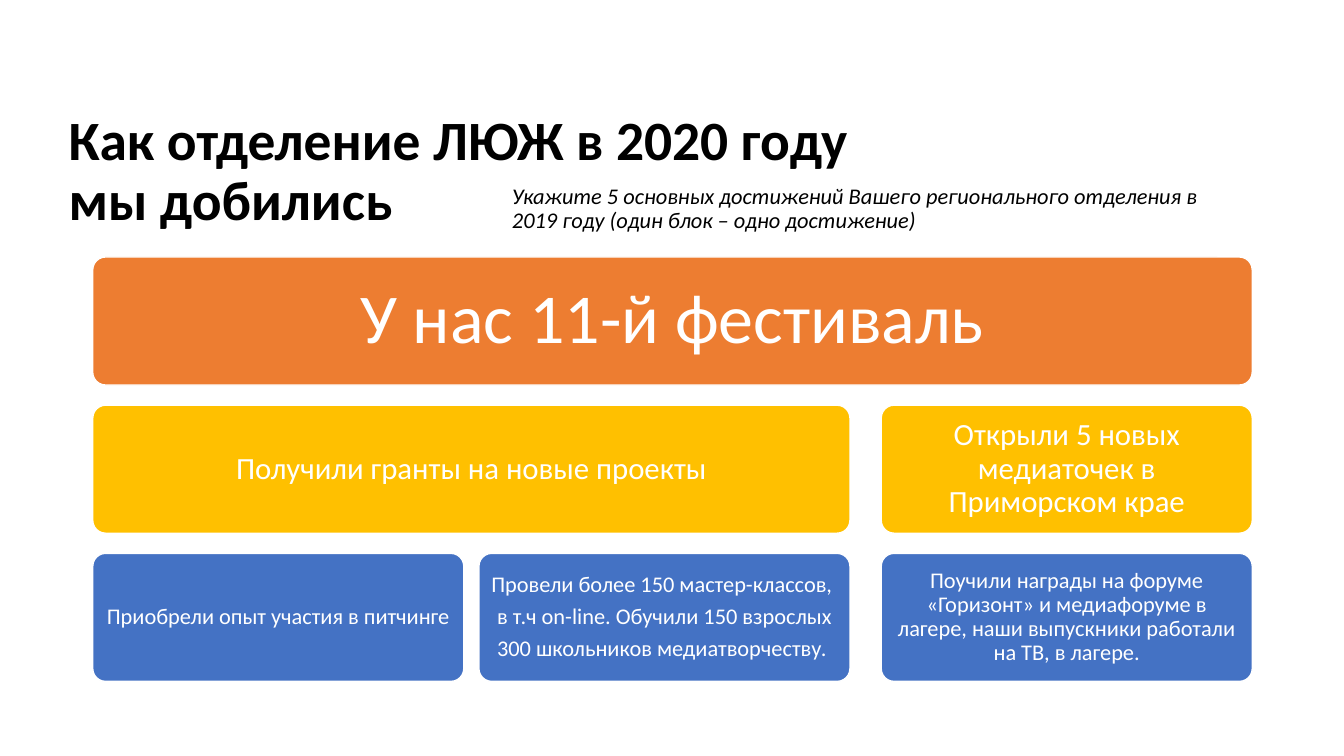
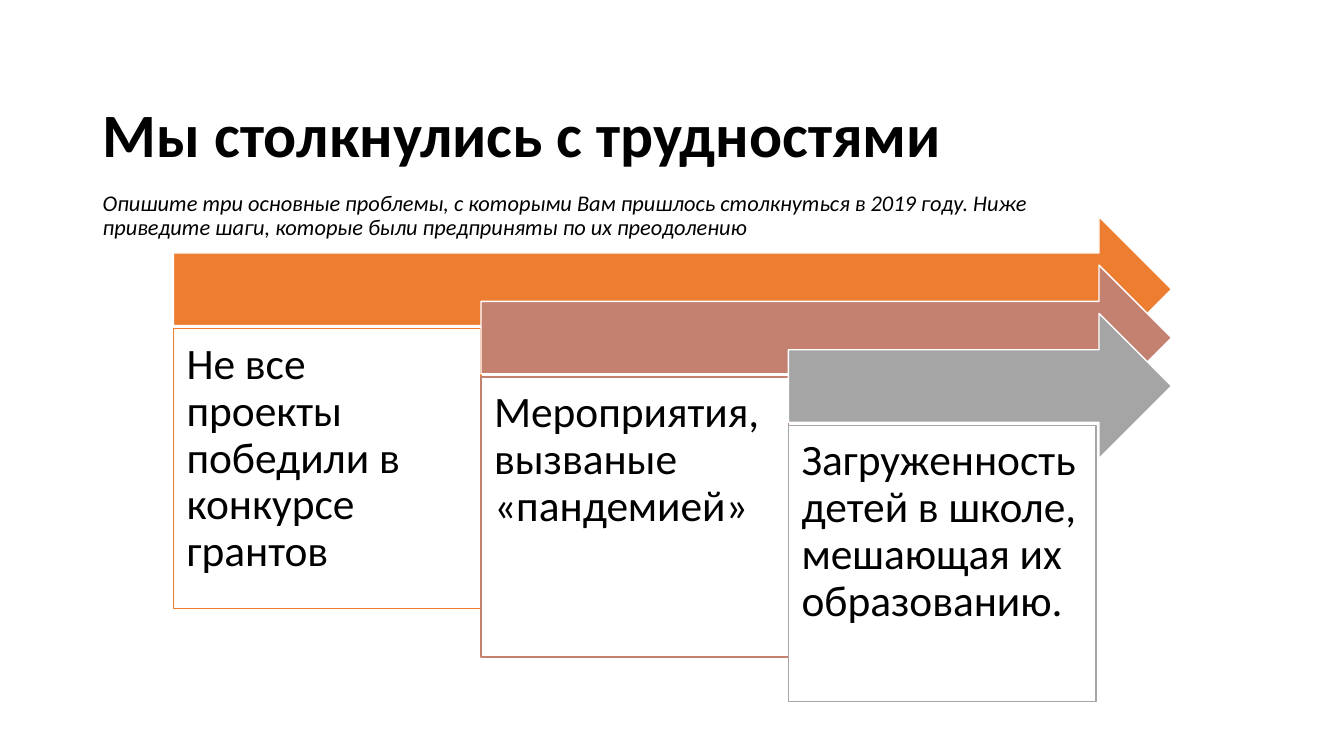
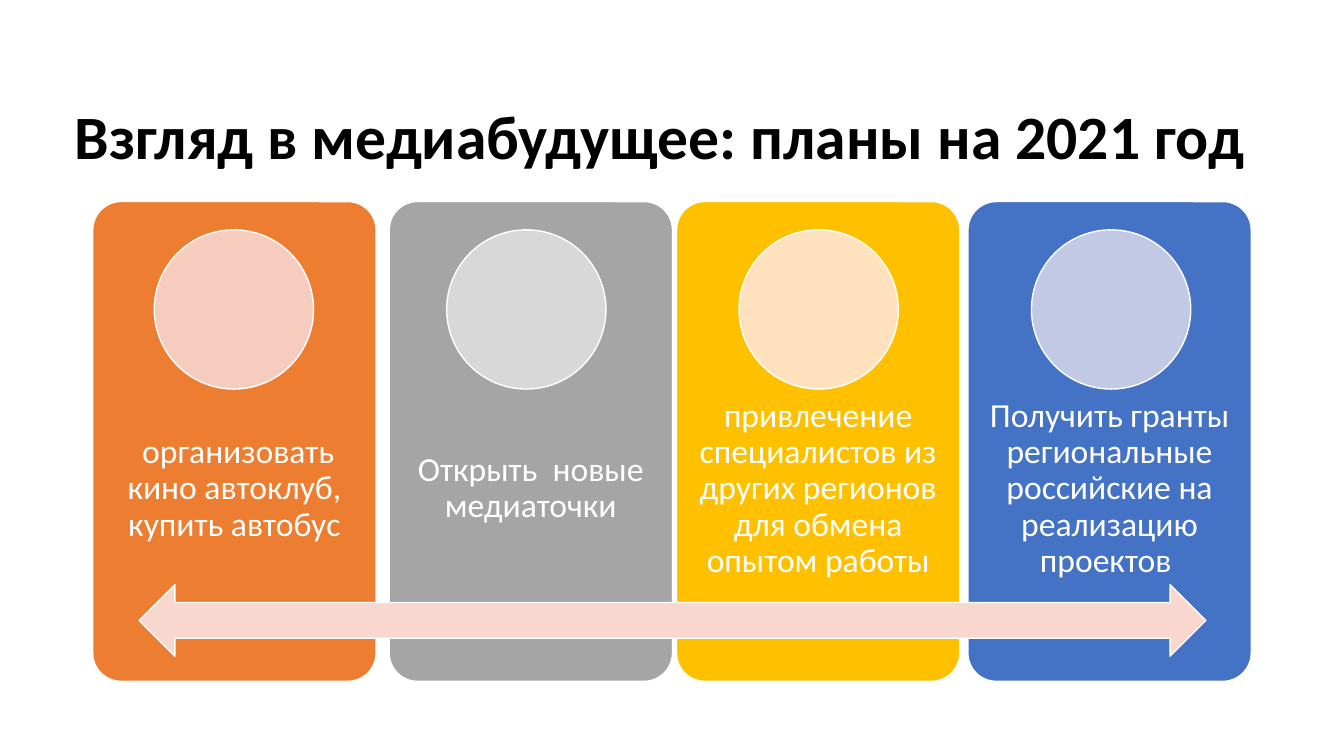
from pptx import Presentation
from pptx.dml.color import RGBColor
from pptx.enum.shapes import MSO_SHAPE as Shape
from pptx.enum.text import MSO_ANCHOR as Anchor, MSO_AUTO_SIZE as AutoSize, PP_ALIGN as Align
from pptx.util import Inches, Pt

FONT = "Calibri"
ORANGE, GOLD, BLUE, GRAY, ROSE = "ED7D31", "FFC000", "4472C4", "A5A5A5", "C48170"
WHITE, BLACK = "FFFFFF", "000000"
TITLE_ONLY = 5


def color(value):
    return RGBColor.from_string(value)


def write(text_frame, text, size, ink=BLACK, bold=False, italic=False,
          align=Align.LEFT, anchor=Anchor.TOP, insets=(0.1, 0.05, 0.1, 0.05)):
    text_frame.text = text
    text_frame.word_wrap = True
    text_frame.auto_size = AutoSize.NONE
    text_frame.vertical_anchor = anchor
    (text_frame.margin_left, text_frame.margin_top,
     text_frame.margin_right, text_frame.margin_bottom) = map(Inches, insets)
    for paragraph in text_frame.paragraphs:
        paragraph.alignment = align
        paragraph.line_spacing = 0.9
        paragraph.space_before = Pt(0)
        for run in paragraph.runs:
            run.font.name = FONT
            run.font.size = Pt(size)
            run.font.bold = bold
            run.font.italic = italic
            run.font.color.rgb = color(ink)
    for paragraph in text_frame.paragraphs[:-1]:
        paragraph.space_after = Pt(size * 0.35)


def add_titled_slide(presentation, text, box, size=44, **style):
    slide = presentation.slides.add_slide(presentation.slide_layouts[TITLE_ONLY])
    title = slide.shapes.title
    title.left, title.top, title.width, title.height = map(Inches, box)
    write(title.text_frame, text, size, bold=True, **{"anchor": Anchor.MIDDLE, **style})
    return slide


def add_caption(slide, text, box):
    caption = slide.shapes.add_textbox(*map(Inches, box))
    write(caption.text_frame, text, 16, italic=True)


def add_figure(slide, kind, box, fill, line=WHITE):
    shape = slide.shapes.add_shape(kind, *map(Inches, box))
    shape.shadow.inherit = False
    shape.fill.solid()
    shape.fill.fore_color.rgb = color(fill)
    shape.line.color.rgb = color(line)
    shape.line.width = Pt(1)
    return shape


def add_card(slide, box, fill, text, size, insets):
    card = add_figure(slide, Shape.ROUNDED_RECTANGLE, box, fill)
    card.adjustments[0] = 0.1
    write(card.text_frame, text, size, WHITE, align=Align.CENTER,
          anchor=Anchor.MIDDLE, insets=insets)


def build_achievements(presentation):
    slide = add_titled_slide(presentation, "Как отделение ЛЮЖ в 2020 году \vмы добились",
                             (0.58, 1.11, 10.86, 1.21), 39.6)
    first, second, third = 0.92, 4.75, 8.74
    narrow, wide, full = 3.68, 7.51, 11.5
    rows = [
        (ORANGE, 50, 0.21, [(first, full, "У нас 11-й фестиваль")]),
        (GOLD, 22, 0.09, [
            (first, wide, "Получили гранты на новые проекты"),
            (third, narrow, "Открыли 5 новых медиаточек в Приморском крае")]),
        (BLUE, 16, 0.07, [
            (first, narrow, "Приобрели опыт участия в питчинге"),
            (second, narrow, "Провели более 150 мастер-классов, \n"
                             "в т.ч on-line. Обучили 150 взрослых\n"
                             "300 школьников медиатворчеству. "),
            (third, narrow, "Поучили награды на форуме «Горизонт» и медиафоруме в лагере, "
                            "наши выпускники работали на ТВ, в лагере.")]),
    ]
    height, gap = 1.27, 0.2
    for index, (fill, size, inset, cards) in enumerate(rows):
        top = 2.55 + index * (height + gap)
        for left, width, text in cards:
            add_card(slide, (left, top, width, height), fill, text, size, (inset,) * 4)
    add_caption(slide, "Укажите 5 основных достижений Вашего регионального отделения "
                       "в 2019 году (один блок – одно достижение)", (4.98, 1.79, 7.43, 0.67))


def build_difficulties(presentation):
    slide = add_titled_slide(presentation, "Мы столкнулись с трудностями",
                             (0.92, 1.03, 11.5, 1.31), anchor=Anchor.TOP,
                             insets=(0.1, 0, 0.1, 0.05))
    problems = [
        (ORANGE, 2.78, "Не все проекты победили в конкурсе грантов"),
        (ROSE, 2.78, "Мероприятия, вызваные «пандемией»"),
        (GRAY, 2.74, "Загруженность детей в школе, мешающая их образованию."),
    ]
    width, right = 3.05, 11.62
    for index, (accent, height, text) in enumerate(problems):
        left, top = 1.72 + index * width, 2.15 + index * 0.48
        add_figure(slide, Shape.RIGHT_ARROW, (left, top, right - left, 1.44), accent)
        panel = add_figure(slide, Shape.RECTANGLE, (left, top + 1.11, width, height),
                           WHITE, accent)
        write(panel.text_frame, text, 31, insets=(0.13,) * 4)
    add_caption(slide, "Опишите три основные проблемы, с которыми Вам пришлось столкнуться "
                       "в 2019 году. Ниже приведите шаги, которые были предприняты "
                       "по их преодолению", (0.92, 1.86, 9.72, 0.67))


def build_plans(presentation):
    slide = add_titled_slide(presentation, "Взгляд в медиабудущее: планы на 2021 год",
                             (0.64, 0.92, 12.5, 0.92))
    plans = [
        (0.92, ORANGE, "F6CCBE", " организовать кино автоклуб, купить автобус"),
        (3.86, GRAY, "D8D8D8", "Открыть  новые медиаточки"),
        (6.71, GOLD, "FFE2BD", "привлечение специалистов из других регионов "
                               "для обмена опытом работы"),
        (9.6, BLUE, "C1C9E4", "Получить гранты региональные российские "
                              "на реализацию проектов "),
    ]
    for index, (left, fill, tint, text) in enumerate(plans):
        add_card(slide, (left, 2, 2.81, 4.76), fill, text, 24, (0.11, 1.82, 0.11, 0.88))
        add_figure(slide, Shape.OVAL, (1.53 + index * 2.9, 2.28, 1.58, 1.58), tint)
    add_figure(slide, Shape.LEFT_RIGHT_ARROW, (1.38, 5.8, 10.58, 0.71), "F8D7CE")


def main():
    presentation = Presentation()
    presentation.slide_width = Inches(13.33)
    presentation.slide_height = Inches(7.5)
    build_achievements(presentation)
    build_difficulties(presentation)
    build_plans(presentation)
    presentation.save("out.pptx")


if __name__ == "__main__":
    main()
